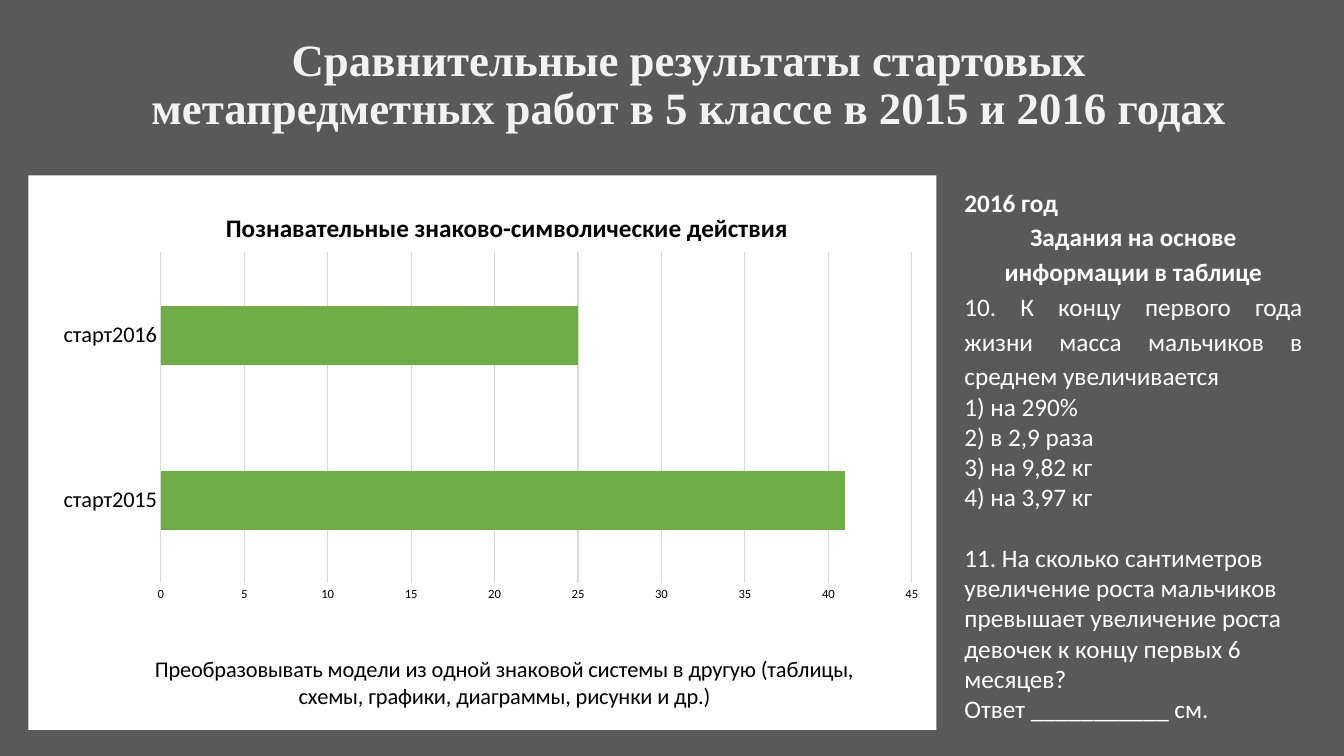
"""Build a slide comparing the 2015 and 2016 starting test results."""
from pptx import Presentation
from pptx.chart.data import CategoryChartData
from pptx.dml.color import RGBColor
from pptx.enum import chart as charts, text as texts
from pptx.oxml import parse_xml
from pptx.oxml.ns import nsdecls
from pptx.util import Pt

BACKGROUND = RGBColor(0x59, 0x59, 0x59)
TITLE_COLOR = RGBColor(0xF2, 0xF2, 0xF2)
WHITE = RGBColor(0xFF, 0xFF, 0xFF)
BLACK = RGBColor(0, 0, 0)
GRID = RGBColor(0xD9, 0xD9, 0xD9)
GREEN = RGBColor(0x70, 0xAD, 0x47)
LEFT = texts.PP_ALIGN.LEFT
CENTER = texts.PP_ALIGN.CENTER
JUSTIFY = texts.PP_ALIGN.JUSTIFY

TITLE = "Сравнительные результаты стартовых метапредметных работ в 5 классе в 2015 и 2016 годах"
HEADING = "Познавательные знаково-символические действия"
SKILL = ("Преобразовывать модели из одной знаковой системы в другую "
         "(таблицы, схемы, графики, диаграммы, рисунки и др.)")
RESULTS = {"старт2015": 41, "старт2016": 25}
TASKS = [
    ("2016 год", dict(bold=True, align=JUSTIFY, spacing=1.15)),
    ("Задания на основе информации в таблице", dict(bold=True, align=CENTER, spacing=1.15)),
    ("10. К концу первого года жизни масса мальчиков в среднем увеличивается",
     dict(align=JUSTIFY, spacing=1.15)),
    ("1) на 290%", {}),
    ("2) в 2,9 раза", {}),
    ("3) на 9,82 кг", {}),
    ("4) на 3,97 кг", {}),
    ("11. На сколько сантиметров увеличение роста мальчиков превышает увеличение роста "
     "девочек к концу первых 6 месяцев?", dict(before=21.6)),
    ("Ответ ___________ см.", {}),
]


def style_font(font, size, color, name="Calibri", bold=False):
    font.size, font.name, font.bold = Pt(size), name, bold
    font.color.rgb = color


def write(frame, content, size=18, color=WHITE, name="Calibri", bold=False,
          align=LEFT, spacing=1.0, before=0):
    """Fill the first empty paragraph of the frame or append one."""
    paragraph = frame.paragraphs[0] if not frame.text else frame.add_paragraph()
    paragraph.alignment = align
    paragraph.line_spacing = spacing
    paragraph.space_before = Pt(before)
    run = paragraph.add_run()
    run.text = content
    style_font(run.font, size, color, name, bold)


def place(shape, left, top, width, height):
    shape.left, shape.top, shape.width, shape.height = map(Pt, (left, top, width, height))


def add_text_box(slide, *box, wrap=True):
    frame = slide.shapes.add_textbox(*map(Pt, box)).text_frame
    frame.word_wrap = wrap
    return frame


def manual_layout(x, y, width=None, height=None):
    """Return a chart layout in fractions of the chart area."""
    values = [("xMode", "edge"), ("yMode", "edge"), ("x", x), ("y", y)]
    if width:
        values = [("layoutTarget", "inner")] + values + [("w", width), ("h", height)]
    items = "".join(f'<c:{tag} val="{value}"/>' for tag, value in values)
    return parse_xml(f'<c:layout {nsdecls("c")}><c:manualLayout>{items}</c:manualLayout></c:layout>')


def set_layout(element, layout, position):
    for old in element.findall(layout.tag):
        element.remove(old)
    element.insert(position, layout)


def add_results_chart(slide):
    data = CategoryChartData()
    data.categories = list(RESULTS)
    data.add_series(SKILL, list(RESULTS.values()))
    chart = slide.shapes.add_chart(charts.XL_CHART_TYPE.BAR_CLUSTERED, Pt(20.2), Pt(125.3),
                                   Pt(648.7), Pt(396), data).chart
    style_font(chart.font, 10, BLACK)
    chart.has_legend = False
    chart.has_title = True
    write(chart.chart_title.text_frame, SKILL, size=16, color=BLACK, align=CENTER)
    chart.chart_title.include_in_layout = False
    set_layout(chart.chart_title._element, manual_layout(0.135, 0.855), 1)
    set_layout(chart._chartSpace.chart.plotArea, manual_layout(0.146, 0.139, 0.827, 0.597), 0)
    plot = chart.plots[0]
    plot.gap_width = 182
    plot.vary_by_categories = False
    fill = plot.series[0].format.fill
    fill.solid()
    fill.fore_color.rgb = GREEN
    categories, values = chart.category_axis, chart.value_axis
    for axis, size in ((categories, 16), (values, 9)):
        axis.major_tick_mark = axis.minor_tick_mark = charts.XL_TICK_MARK.NONE
        style_font(axis.tick_labels.font, size, BLACK)
    values.minimum_scale, values.maximum_scale, values.major_unit = 0, 45, 5
    values.format.line.fill.background()
    for line in (categories.format.line, values.major_gridlines.format.line):
        line.color.rgb = GRID
        line.width = Pt(0.75)
    area = parse_xml(f'<c:spPr {nsdecls("c", "a")}><a:solidFill><a:srgbClr val="{WHITE}"/>'
                     '</a:solidFill><a:ln><a:noFill/></a:ln></c:spPr>')
    chart._chartSpace.chart.addnext(area)


def main():
    presentation = Presentation()
    presentation.slide_width, presentation.slide_height = Pt(960), Pt(540)
    slide = presentation.slides.add_slide(presentation.slide_layouts[5])
    slide.background.fill.solid()
    slide.background.fill.fore_color.rgb = BACKGROUND

    title = slide.shapes.title
    place(title, 74.9, 9.4, 834.5, 104.4)
    title.text_frame.vertical_anchor = texts.MSO_ANCHOR.MIDDLE
    write(title.text_frame, TITLE, size=32, color=TITLE_COLOR, name="Times New Roman",
          bold=True, align=CENTER, spacing=0.9)

    add_results_chart(slide)
    heading = add_text_box(slide, 152.6, 148.3, 419, 28.8, wrap=False)
    write(heading, HEADING, color=BLACK, bold=True, align=CENTER)
    tasks = add_text_box(slide, 681.8, 126.7, 255.6, 397.4)
    for content, style in TASKS:
        write(tasks, content, **style)
    presentation.save("out.pptx")


if __name__ == "__main__":
    main()
